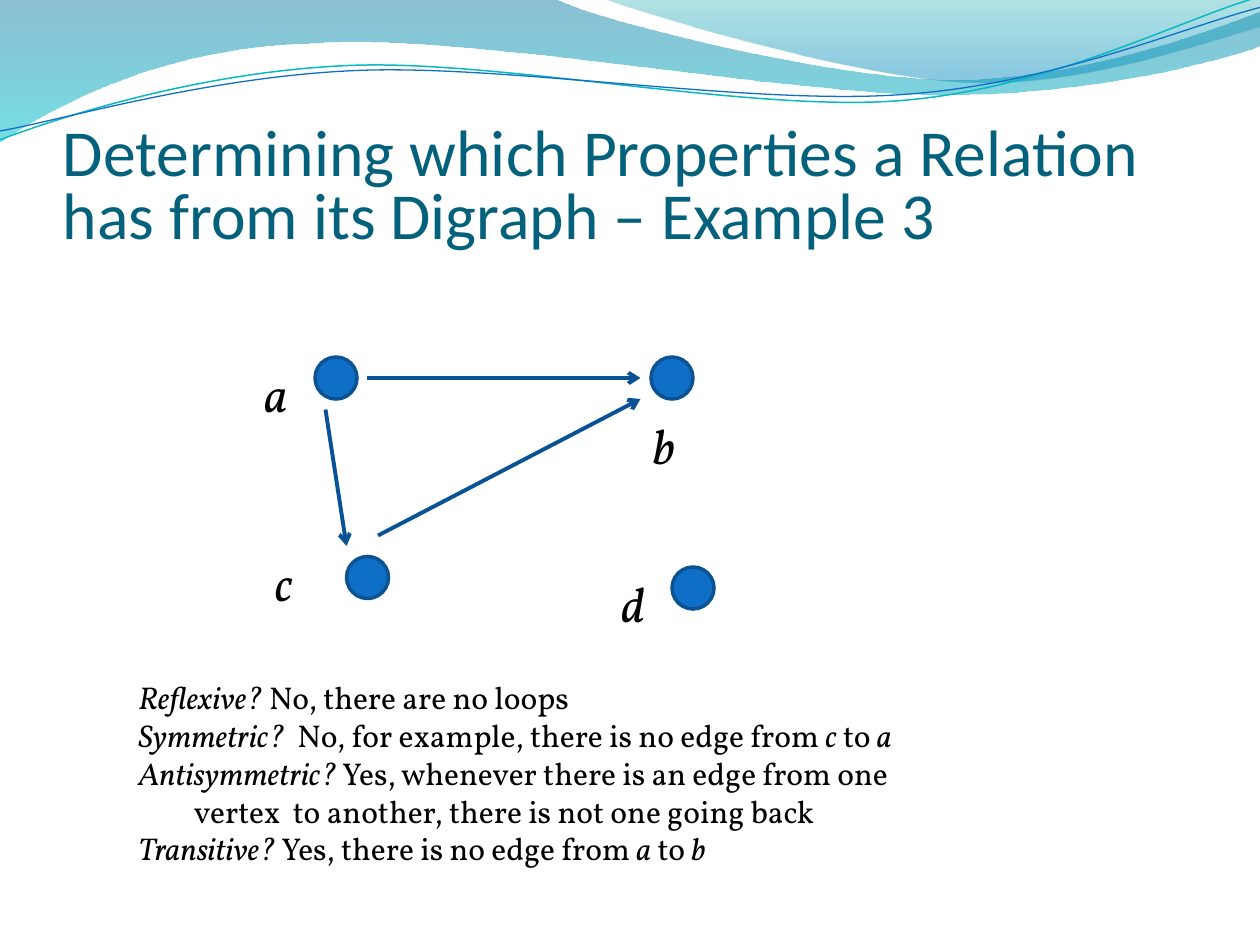
"""Builds a slide on reading the properties of a relation from its digraph."""
import math
import lxml.etree
import pptx
import pptx.dml.color
import pptx.enum.shapes
import pptx.enum.text
import pptx.oxml.ns
import pptx.util

COLORS = {
    "title": "04617B", "text": "000000", "node": "0F6FC6", "node_line": "0B5292", "edge": "095295",
    "deep": "0074A1", "aqua": "00C6CF", "teal": "00A1A9", "sky": "008BBF", "wave": "0AB8BF",
}
COLORS = {name: pptx.dml.color.RGBColor.from_string(value) for name, value in COLORS.items()}
INCH = 914400
CELL = INCH / 12
qn = pptx.oxml.ns.qn

deck = pptx.Presentation()
deck.slide_width, deck.slide_height = int(120 * CELL), int(90 * CELL)
page = deck.slides.add_slide(deck.slide_layouts[6])


def add_curve(segments, closed, angle=0):
    points = [segment[i:i + 2] for segment in segments for i in range(0, len(segment), 2)]
    middle = [(min(values) + max(values)) / 2 for values in zip(*points)]
    turn = math.radians(-angle)
    cosine, sine = math.cos(turn), math.sin(turn)
    offsets = [(x - middle[0], y - middle[1]) for x, y in points]
    points = [(int(INCH * (middle[0] + x * cosine - y * sine)),
               int(INCH * (middle[1] + x * sine + y * cosine))) for x, y in offsets]
    builder = page.shapes.build_freeform(*points[0], scale=1.0)
    builder.add_line_segments(points[1:], close=closed)
    curve = builder.convert_to_shape()
    lines = iter(list(curve._element.iter(qn("a:lnTo"))))
    for segment in segments[1:]:
        group = [next(lines) for _ in range(len(segment) // 2)]
        if len(group) == 3:
            bend = lxml.etree.Element(qn("a:cubicBezTo"))
            group[0].addprevious(bend)
            for line in group:
                bend.append(line[0])
                line.getparent().remove(line)
    curve.rotation = angle
    curve.shadow.inherit = False
    return curve


def add_text(bounds, paragraphs, font_format, color, frame_format):
    box = page.shapes.add_textbox(*[int(value * CELL) for value in bounds])
    frame = box.text_frame
    for name, value in {"word_wrap": True, **frame_format}.items():
        setattr(frame, name, value)
    for index, text in enumerate(paragraphs):
        para = frame.paragraphs[0] if index == 0 else frame.add_paragraph()
        for position, part in enumerate(text.split("*")):
            if part:
                span = para.add_run()
                span.text = part
                span.font.color.rgb = COLORS[color]
                for name, value in {"italic": position % 2 == 1, **font_format}.items():
                    setattr(span.font, name, value)
    return frame


bands = [
    ([(0, 0), (4.4, -0.01), (4.76, 0.17, 6.64, 0.63, 7.58, 0.63), (8.53, 0.63, 9.58, 0.26, 10, 0.09),
      (10.01, 0.36), (9.83, 0.44, 8.7, 0.76, 7.46, 0.75), (6.22, 0.75, 3.82, 0.28, 2.57, 0.34),
      (1.29, 0.36, 0.46, 0.83, -0.01, 1.13), (0, 0)],
     [(0, "deep", 45), (1, "aqua", 55)]),
    ([(4.79, -0.01), (5.09, 0.11, 6.82, 0.62, 7.69, 0.65), (8.56, 0.69, 9.61, 0.32, 10, 0.21),
      (10, 0), (4.79, -0.01)],
     [(0, "teal", 30), (0.8, "sky", 45)]),
]
for segments, stops in bands:
    band = add_curve(segments, True)
    band.line.fill.background()
    band.fill.gradient()
    band.fill.gradient_angle = 270
    for stop, (position, color, opacity) in zip(band.fill.gradient_stops, stops):
        stop.position = position
        stop.color.rgb = COLORS[color]
    for element, (position, color, opacity) in zip(band._element.spPr.iter(qn("a:srgbClr")), stops):
        lxml.etree.SubElement(element, qn("a:alpha"), val=str(opacity * 1000))

waves = [
    ([(0, 1.11), (0.48, 0.93, 1.58, 0.57, 2.77, 0.52), (3.95, 0.47, 5.93, 0.89, 7.13, 0.8),
      (8.33, 0.71, 9.38, 0.15, 9.98, -0.02)], "wave", 0.85),
    ([(0, 1.04), (0.47, 0.96, 1.64, 0.61, 2.83, 0.56), (4.03, 0.51, 5.97, 0.84, 7.17, 0.75),
      (8.36, 0.67, 9.41, 0.21, 10, 0.06)], "node", 0.75),
]
for segments, color, width in waves:
    wave = add_curve(segments, False, 357.3)
    wave.fill.background()
    wave.line.color.rgb = COLORS[color]
    wave.line.width = pptx.util.Pt(width)

title_font = {"name": "Calibri", "size": pptx.util.Pt(37.5)}
title_frame = {"vertical_anchor": pptx.enum.text.MSO_ANCHOR.BOTTOM,
               "margin_left": 0, "margin_right": 0, "margin_bottom": 0}
title = add_text((6, 9, 108, 15), ["Determining which Properties a Relation has from its Digraph – Example 3"],
                 title_font, "title", title_frame)
title.paragraphs[0].line_spacing = 0.8

growing = {"auto_size": pptx.enum.text.MSO_AUTO_SIZE.SHAPE_TO_FIT_TEXT}
label_font = {"name": "Vollkorn", "size": pptx.util.Pt(28)}
vertices = {"a": (30, 34, 24, 34), "b": (62, 34, 61, 39), "c": (33, 53, 25, 52), "d": (64, 54, 58, 54)}
for letter, (left, top, label_left, label_top) in vertices.items():
    bounds = [int(value * CELL) for value in (left, top, 4, 4)]
    node = page.shapes.add_shape(pptx.enum.shapes.MSO_SHAPE.OVAL, *bounds)
    node.shadow.inherit = False
    node.fill.solid()
    node.fill.fore_color.rgb = COLORS["node"]
    node.line.color.rgb = COLORS["node_line"]
    node.line.width = pptx.util.Pt(2)
    add_text((label_left, label_top, 5, 6.8), [f"*{letter}*"], label_font, "text", growing)

for ends in [(35, 36, 61, 36), (31, 39, 33, 52), (36, 51, 61, 38)]:
    edge = page.shapes.add_connector(pptx.enum.shapes.MSO_CONNECTOR.STRAIGHT, *[int(value * CELL) for value in ends])
    edge.line.color.rgb = COLORS["edge"]
    edge.line.width = pptx.util.Pt(2.25)
    lxml.etree.SubElement(edge.line._get_or_add_ln(), qn("a:tailEnd"), type="arrow")
    lxml.etree.SubElement(edge._element.spPr, qn("a:effectLst"))

answers = [
    "*Reflexive?* No, there are no loops",
    "*Symmetric?*  No, for example, there is no edge from *c* to *a*",
    "*Antisymmetric?* Yes, whenever there is an edge from one",
    "vertex  to another, there is not one going back",
    "*Transitive? *Yes, there is no edge from *a* to *b*",
]
answer_font = {"name": "Vollkorn", "size": pptx.util.Pt(18)}
answer_frame = add_text((12, 64, 87, 19.4), answers, answer_font, "text", growing)
answer_frame.paragraphs[3]._p.get_or_add_pPr().set("marL", str(int(0.44 * INCH)))

deck.save("out.pptx")
